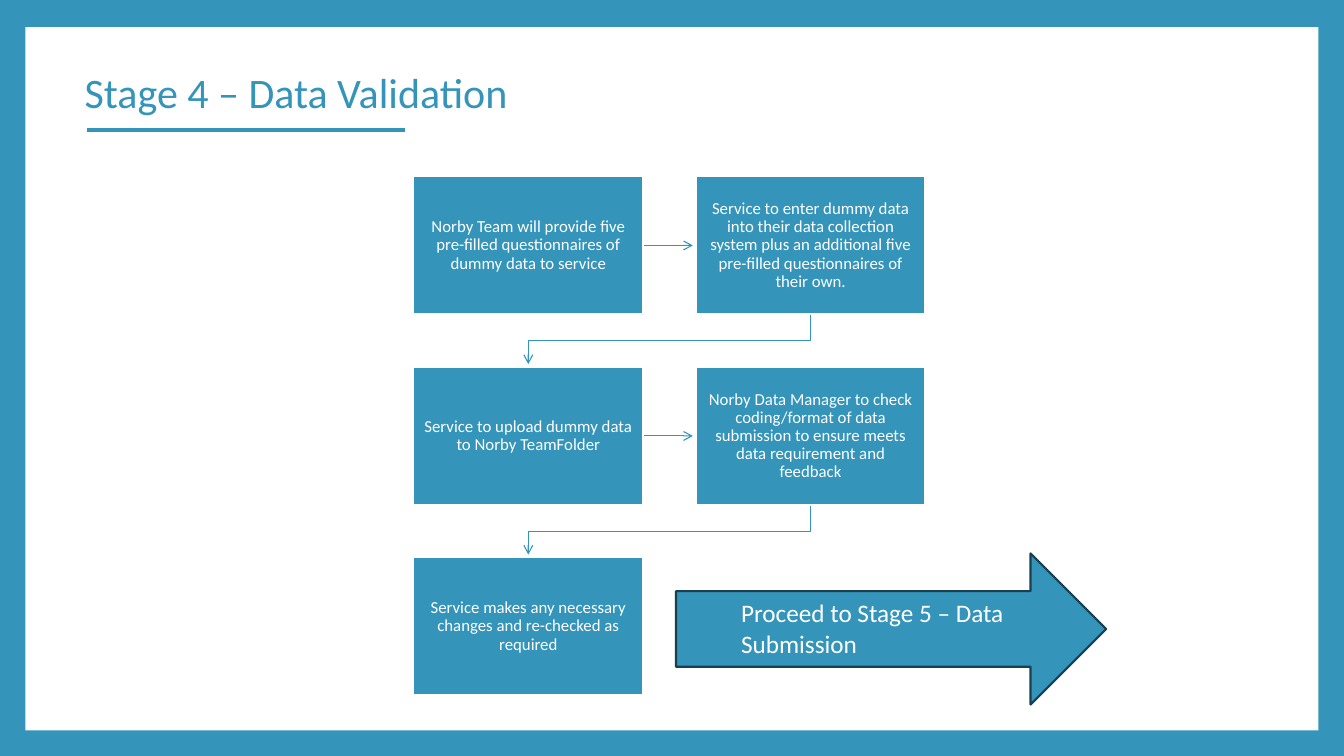
import pptx
import pptx.dml.color
import pptx.enum.shapes
import pptx.enum.text
import pptx.util
from lxml import etree

MSO = pptx.enum.shapes.MSO_SHAPE
ALIGN = pptx.enum.text.PP_ALIGN
ANCHOR = pptx.enum.text.MSO_ANCHOR
BLUE, WHITE, NAVY = "3494BA", "FFFFFF", "174152"


def rgb(value):
    return pptx.dml.color.RGBColor.from_string(value)


class FlowSlide:
    font = "Calibri"
    left, top = 4.1, 1.75
    col, row = 2.8, 1.89
    box_w, box_h = 2.28, 1.37

    def __init__(self, prs):
        self.prs = prs
        self.s = prs.slides.add_slide(prs.slide_layouts[5])
        fill = self.s.background.fill
        fill.solid()
        fill.fore_color.rgb = rgb(BLUE)

    def share(self, x, y):
        return int(self.prs.slide_width * x), int(self.prs.slide_height * y)

    def grid(self, col, row):
        return (pptx.util.Inches(self.left + col * self.col),
                pptx.util.Inches(self.top + row * self.row))

    def text(self, tf, words, size, color, align=ALIGN.LEFT, anchor=ANCHOR.MIDDLE, spacing=0.9):
        tf.word_wrap = True
        tf.vertical_anchor = anchor
        p = tf.paragraphs[0]
        p.alignment = align
        p.line_spacing = spacing
        r = p.add_run()
        r.text = words
        r.font.name = self.font
        r.font.size = pptx.util.Pt(size)
        r.font.color.rgb = rgb(color)

    def title(self, words, x, y, w, h):
        sp = self.s.shapes.title
        sp.left, sp.top = self.share(x, y)
        sp.width, sp.height = self.share(w, h)
        self.text(sp.text_frame, words, 30, BLUE)
        self.s.shapes._spTree.append(sp._element)

    def shape(self, kind, at, size, fill, line=None):
        sp = self.s.shapes.add_shape(kind, *at, *size)
        sp.shadow.inherit = False
        sp.fill.solid()
        sp.fill.fore_color.rgb = rgb(fill)
        if line:
            sp.line.color.rgb = rgb(line)
            sp.line.width = pptx.util.Pt(1.5)
        else:
            sp.line.fill.background()
        return sp

    def step(self, col, row, words):
        size = pptx.util.Inches(self.box_w), pptx.util.Inches(self.box_h)
        sp = self.shape(MSO.RECTANGLE, self.grid(col, row), size, BLUE, WHITE)
        tf = sp.text_frame
        tf.margin_left = tf.margin_right = pptx.util.Inches(0.09)
        tf.margin_top = tf.margin_bottom = pptx.util.Inches(0.09)
        self.text(tf, words, 12, WHITE, ALIGN.CENTER)

    def label(self, words, size, x, y, w, h):
        sp = self.s.shapes.add_textbox(*self.share(x, y), *self.share(w, h))
        self.text(sp.text_frame, words, size, WHITE, anchor=ANCHOR.TOP, spacing=1.0)

    def line(self, start, end, width):
        sp = self.s.shapes.add_connector(pptx.enum.shapes.MSO_CONNECTOR.STRAIGHT, *start, *end)
        sp.line.color.rgb = rgb(BLUE)
        sp.line.width = pptx.util.Pt(width)
        etree.SubElement(sp._element.spPr, pptx.oxml.ns.qn("a:effectLst"))
        return sp

    def arrowhead(self, sp):
        etree.SubElement(sp.line._get_or_add_ln(), pptx.oxml.ns.qn("a:tailEnd"), type="arrow")

    def across(self, row):
        middle = row + self.box_h / 2 / self.row
        start = self.grid(self.box_w / self.col, middle)
        self.arrowhead(self.line(start, self.grid(0.99, middle), 0.79))

    def back(self, row):
        center = self.box_w / 2 / self.col
        bottom = row + self.box_h / self.row
        turn = (bottom + row + 1) / 2
        corners = [self.grid(1 + center, turn), self.grid(center, turn),
                   self.grid(center, row + 0.985)]
        builder = self.s.shapes.build_freeform(*self.grid(1 + center, bottom), scale=1.0)
        builder.add_line_segments(corners, close=False)
        sp = builder.convert_to_shape()
        sp.shadow.inherit = False
        sp.fill.background()
        sp.line.color.rgb = rgb(BLUE)
        sp.line.width = pptx.util.Pt(0.79)
        self.arrowhead(sp)


def main():
    prs = pptx.Presentation()
    prs.slide_width = pptx.util.Inches(13.33)
    prs.slide_height = pptx.util.Inches(7.5)
    flow = FlowSlide(prs)

    flow.shape(MSO.RECTANGLE, flow.share(0.019, 0.036), flow.share(0.962, 0.93), WHITE)
    flow.line(flow.share(0.0645, 0.172), flow.share(0.301, 0.172), 3)
    flow.title("Stage 4 – Data Validation", 0.0555, 0.029, 0.878, 0.193)

    for row in range(2):
        flow.across(row)
        flow.back(row)

    steps = [
        "Norby Team will provide five pre-filled questionnaires of dummy data to service",
        "Service to enter dummy data into their data collection system plus an additional "
        "five pre-filled questionnaires of their own.",
        "Service to upload dummy data to Norby TeamFolder",
        "Norby Data Manager to check coding/format of data submission to ensure meets "
        "data requirement and feedback",
        "Service makes any necessary changes and re-checked as required",
    ]
    for i, words in enumerate(steps):
        flow.step(i % 2, i // 2, words)

    flow.shape(MSO.RIGHT_ARROW, flow.share(0.503, 0.732), flow.share(0.32, 0.2), BLUE, NAVY)
    flow.label("Proceed to Stage 5 – Data Submission", 18, 0.544, 0.784, 0.242, 0.095)

    prs.save("out.pptx")


if __name__ == "__main__":
    main()
